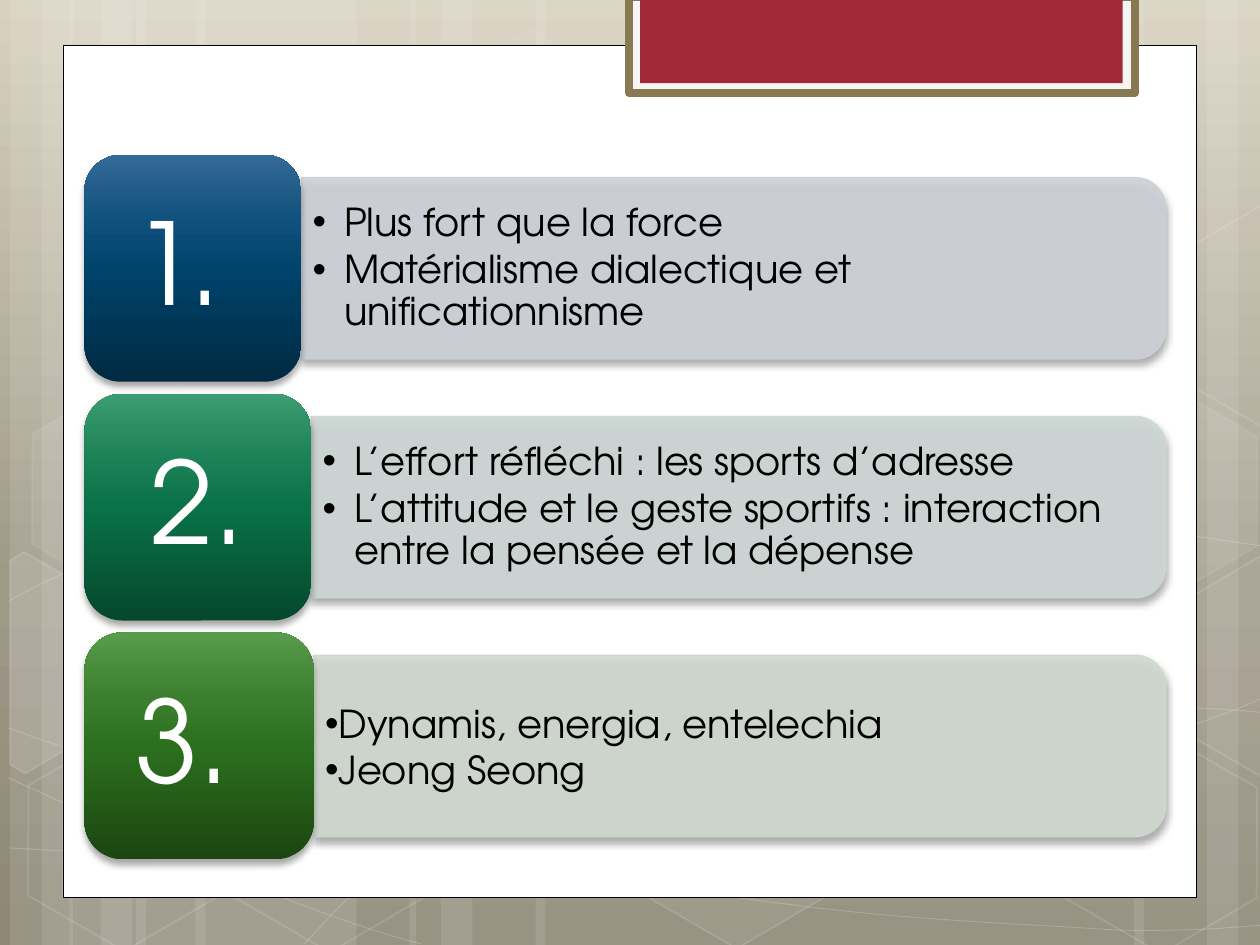
from pptx import Presentation
from pptx.dml.color import RGBColor
from pptx.enum.shapes import MSO_SHAPE
from pptx.enum.text import MSO_ANCHOR, PP_ALIGN
from pptx.oxml.ns import qn
from pptx.oxml.xmlchemy import OxmlElement
from pptx.util import Inches, Pt

RECT, HEXAGON = MSO_SHAPE.RECTANGLE, MSO_SHAPE.HEXAGON
TILE, BAR = MSO_SHAPE.ROUNDED_RECTANGLE, MSO_SHAPE.ROUND_2_SAME_RECTANGLE
MIDDLE, CENTER, LEFT = MSO_ANCHOR.MIDDLE, PP_ALIGN.CENTER, PP_ALIGN.LEFT

FONT, BULLET_FONT = "TeX Gyre Adventor", "Arial"
WHITE, BLACK = RGBColor(255, 255, 255), RGBColor(0, 0, 0)
PAPER, GOLD, RED = (RGBColor.from_string(c) for c in ("F5F5F5", "887952", "9F2936"))
BACKDROP = [(0, "D8D1C0"), (62, "9F9988"), (100, "8E8776")]

# Backdrop bands: left, width
BANDS = [(1.08, 1.75), (0.08, 0.5), (0.33, 0.83), (1.55, 1.75), (0.55, 0.5),
         (0.8, 0.83), (7.33, 1.75), (9.58, 0.5), (9, 0.83), (4.25, 3.08),
         (3.25, 0.5), (3.5, 0.83)]
# Curves: a start point, then two controls and an end for each Bezier segment
CURVES = [
    [(0.07, 6.73), (0.61, 6.76), (1.15, 6.79), (1.9, 6.78), (2.65, 6.77), (3.58, 6.75),
     (4.58, 6.65), (5.58, 6.55), (7, 6.36), (7.92, 6.17), (8.83, 5.98), (9.77, 5.68),
     (10.07, 5.51)],
    [(0.07, 4.77), (0.36, 4.61), (0.65, 4.46), (1.21, 4.31), (1.78, 4.16), (2.59, 3.94),
     (3.47, 3.87), (4.36, 3.8), (5.44, 3.79), (6.54, 3.87), (7.64, 3.95), (9.47, 4.26),
     (10.07, 4.34)],
    [(0.06, 6.17), (1.27, 6.72), (2.47, 7.27), (3.34, 7.49)],
    [(0.07, 5.78), (0.38, 5.89), (0.7, 6), (1.28, 6.16), (1.86, 6.31), (2.73, 6.56),
     (3.57, 6.73), (4.4, 6.9), (5.45, 7.08), (6.28, 7.18), (7.11, 7.29), (8, 7.33),
     (8.53, 7.36), (9.05, 7.4), (9.19, 7.38), (9.45, 7.38), (9.71, 7.37), (9.89, 7.35),
     (10.07, 7.34)],
    [(2.42, 7.49), (2.6, 7.29), (2.78, 7.09), (3.02, 6.91), (3.26, 6.73), (3.6, 6.53),
     (3.88, 6.39), (4.16, 6.25), (4.33, 6.19), (4.7, 6.09), (5.06, 5.99), (5.73, 5.85),
     (6.08, 5.78), (6.44, 5.71), (6.49, 5.71), (6.8, 5.69), (7.11, 5.66), (7.6, 5.63),
     (7.94, 5.62), (8.29, 5.61), (8.86, 5.62), (8.86, 5.62), (9.08, 5.62), (9.31, 5.62),
     (9.53, 5.62), (9.71, 5.63), (9.88, 5.64), (9.97, 5.65), (10.06, 5.66), (10.03, 5.65),
     (10.06, 5.66)],
]
# Hexagons: left, top, fill opacity (0 for none), line opacity
HEXAGONS = [(3.34, 0.36, 4, 8), (4.97, 5.89, 6, 12), (0.11, 5.91, 0, 12),
            (0.14, 3.12, 7, 8), (1.74, 5.92, 0, 12), (7.53, 4.53, 10, 12),
            (8.34, 5.93, 0, 12), (8.34, 3.14, 7, 8)]
# Hexagons cut by the page edge: fill opacity, corners
CUT_HEXAGONS = [
    (10, [(0.08, 4.45), (0.19, 4.38), (0.96, 4.82), (0.95, 5.7), (0.2, 6.14), (0.08, 6.07)]),
    (4, [(9.26, 4.85), (10.01, 4.41), (10.09, 4.46), (10.09, 6.13), (10.02, 6.17), (9.26, 5.73)]),
    (0, [(9.26, 2.07), (10.01, 1.63), (10.1, 1.68), (10.09, 3.35), (10.02, 3.39), (9.26, 2.95)]),
]
# Rows: number, tile width, tile colours from the bottom up, bar colour, lines, hanging indent
ROWS = [
    ("1. ", 1.72, ("002A42", "00436B", "0F507C", "346A97"), "CDD1D7",
     ["Plus fort que la force", "Matérialisme dialectique et unificationnisme"], True),
    ("2.", 1.8, ("05482D", "0A7148", "1B8055", "3B9D70"), "CED8D5",
     ["L’effort réfléchi : les sports d’adresse",
      "L’attitude et le geste sportifs : interaction entre la pensée et la dépense"], True),
    ("3. ", 1.82, ("1B4611", "2C6F1E", "3B7E2D", "579C4A"), "D0D9CF",
     ["Dynamis, energia, entelechia", "Jeong Seong"], False),
]
FIRST_TOP, LAST_TOP = 1.23, 5.02
TILE_LEFT, TILE_HEIGHT = 0.67, 1.8
BAR_RIGHT, BAR_HEIGHT = 9.25, 1.44


def add_node(parent, tag, **values):
    node = OxmlElement(tag)
    for name, value in values.items():
        node.set(name, str(value))
    parent.append(node)
    return node


def set_color(fill, parent, color, opacity):
    fill.solid()
    fill.fore_color.rgb = color
    if opacity < 100:
        add_node(parent.find(qn("a:solidFill"))[0], "a:alpha", val=opacity * 1000)


def paint(shape, fill=None, opacity=100, line=None, width=1, line_opacity=100):
    properties = shape._element.spPr
    if fill is None or opacity == 0:
        shape.fill.background()
    else:
        set_color(shape.fill, properties, fill, opacity)
    if line is None:
        shape.line.fill.background()
    else:
        shape.line.width = Pt(width)
        set_color(shape.line.fill, properties.find(qn("a:ln")), line, line_opacity)
    shape.shadow.inherit = False
    return shape


def set_gradient(fill, root, stops, angle):
    fill.gradient()
    gradient = next(root.iter(qn("a:gradFill")))
    stop_list = gradient.find(qn("a:gsLst"))
    for old_stop in list(stop_list):
        stop_list.remove(old_stop)
    for position, color in stops:
        stop = add_node(stop_list, "a:gs", pos=position * 1000)
        add_node(stop, "a:srgbClr", val=color)
    gradient.find(qn("a:lin")).set("ang", str(angle * 60000))


def add_shadow(shape):
    effects = shape._element.spPr.find(qn("a:effectLst"))
    shadow = add_node(effects, "a:outerShdw", blurRad=Pt(4), dist=Pt(3),
                      dir=90 * 60000, rotWithShape=0)
    add_node(add_node(shadow, "a:srgbClr", val="000000"), "a:alpha", val=35000)


def add_block(page, kind, left, top, width, height):
    return page.shapes.add_shape(kind, *map(Inches, (left, top, width, height)))


def add_outline(page, points, closed):
    start, *others = [(Inches(x), Inches(y)) for x, y in points]
    builder = page.shapes.build_freeform(*start)
    builder.add_line_segments(others, close=closed)
    return builder.convert_to_shape()


def add_curve(page, points):
    curve = add_outline(page, points, False)
    lines = list(curve._element.iter(qn("a:lnTo")))
    outline = lines[0].getparent()
    for first in range(0, len(lines), 3):
        segment = add_node(outline, "a:cubicBezTo")
        for line in lines[first:first + 3]:
            segment.append(line[0])
            outline.remove(line)
    return curve


def add_text(page, place, lines, size, color, inset, align=LEFT, bullet=False, hanging=True):
    box = page.shapes.add_textbox(*map(Inches, place))
    frame = box.text_frame
    across, down = map(Inches, inset)
    frame_format = {"word_wrap": True, "vertical_anchor": MIDDLE, "margin_left": across,
                    "margin_right": across, "margin_top": down, "margin_bottom": down}
    para_format = {"alignment": align, "line_spacing": 0.9 if hanging else 1.0,
                   "space_after": Pt(3.3 if bullet and hanging else 0)}
    for name, value in frame_format.items():
        setattr(frame, name, value)
    for index, line in enumerate(lines):
        para = frame.add_paragraph() if index else frame.paragraphs[0]
        for name, value in para_format.items():
            setattr(para, name, value)
        span = para.add_run()
        span.text = line
        for name, value in {"name": FONT, "size": Pt(size)}.items():
            setattr(span.font, name, value)
        span.font.color.rgb = color
        if bullet:
            indent = Inches(0.25 if hanging else 0)
            properties = para._p.get_or_add_pPr()
            properties.set("marL", str(indent))
            properties.set("indent", str(-indent))
            add_node(properties, "a:buFont", typeface=BULLET_FONT)
            add_node(properties, "a:buChar", char="•")


def add_backdrop(page):
    set_gradient(page.background.fill, page._element, BACKDROP, 90)
    for left, width in BANDS:
        paint(add_block(page, RECT, left, 0, width, 7.5), WHITE, 10)
    for points in CURVES:
        paint(add_curve(page, points), line=WHITE, width=0.5, line_opacity=20)
    for left, top, opacity, line_opacity in HEXAGONS:
        hexagon = add_block(page, HEXAGON, left, top, 1.75, 1.52)
        hexagon.rotation = 30
        hexagon.adjustments[0] = 0.285
        paint(hexagon, WHITE, opacity, WHITE, 1, line_opacity)
    for opacity, corners in CUT_HEXAGONS:
        paint(add_outline(page, corners, True), WHITE, opacity, WHITE, 1, 12)


def add_panel(page):
    paint(add_block(page, RECT, 0.5, 0.36, 9, 6.76), WHITE, line=BLACK, width=0.5)
    paint(add_block(page, RECT, 4.99, -0.02, 4.02, 0.76), PAPER, line=GOLD, width=4.33)
    paint(add_block(page, RECT, 5.08, -0.02, 3.83, 0.68), RED)


def add_row(page, top, number, tile_width, tile_colors, bar_color, lines, hanging):
    # Bar turned a quarter, so that its round corners face right
    left = TILE_LEFT + tile_width
    length = BAR_RIGHT - left
    bar = add_block(page, BAR, (left + BAR_RIGHT - BAR_HEIGHT) / 2,
                    top + (TILE_HEIGHT - length) / 2, BAR_HEIGHT, length)
    bar.rotation = 90
    color = RGBColor.from_string(bar_color)
    add_shadow(paint(bar, color, 90, color, 0.75, 90))
    add_text(page, (left, top + 0.25, length - 0.07, 1.3), lines, 22, BLACK,
             (0.09, 0.05), bullet=True, hanging=hanging)
    # Numbered tile
    tile = paint(add_block(page, TILE, TILE_LEFT, top, tile_width, TILE_HEIGHT))
    set_gradient(tile.fill, tile._element, zip((0, 50, 70, 100), tile_colors), 270)
    add_shadow(tile)
    add_text(page, (TILE_LEFT + 0.09, top + 0.09, tile_width - 0.18, 1.63), [number],
             65, WHITE, (0.27, 0.14), CENTER)


def main():
    deck = Presentation()
    deck.slide_width, deck.slide_height = Inches(10), Inches(7.5)
    page = deck.slides.add_slide(deck.slide_layouts[6])
    add_backdrop(page)
    add_panel(page)
    pitch = (LAST_TOP - FIRST_TOP) / (len(ROWS) - 1)
    for index, row in enumerate(ROWS):
        add_row(page, FIRST_TOP + index * pitch, *row)
    deck.save("out.pptx")


if __name__ == "__main__":
    main()
